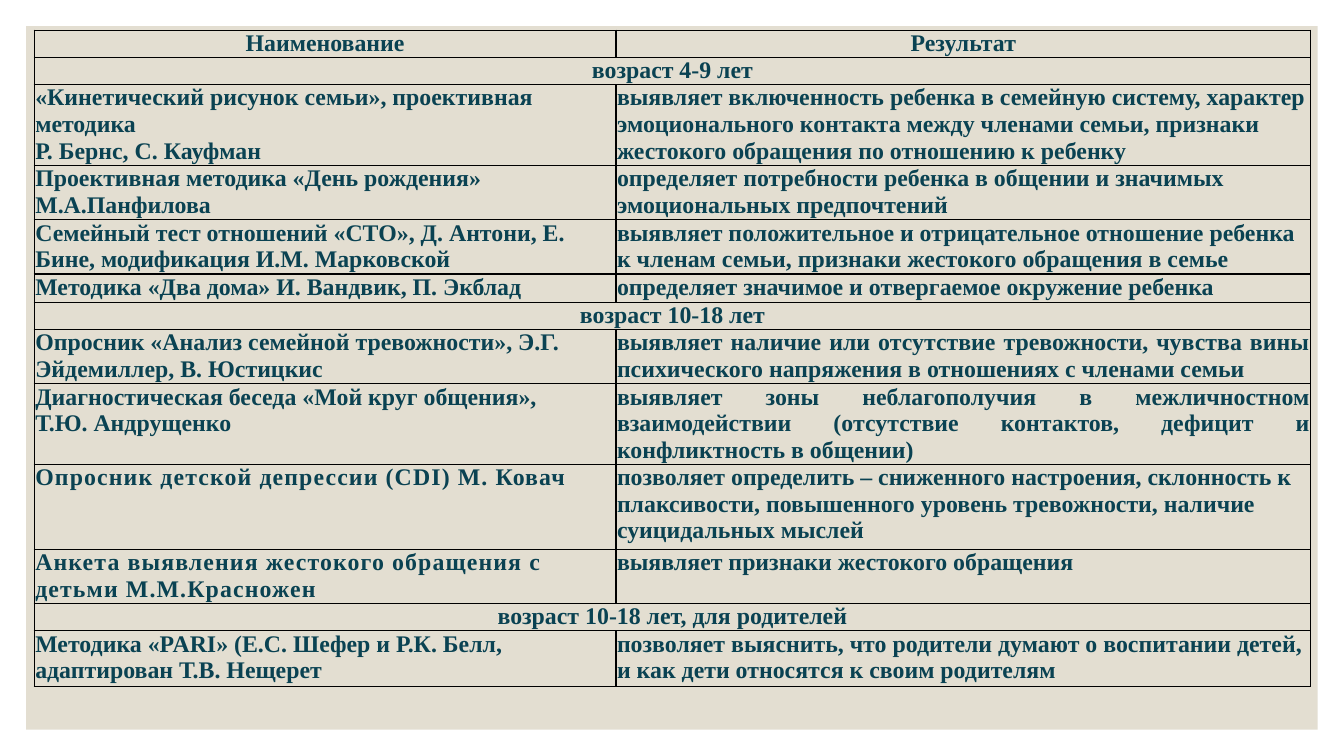
from lxml import etree
from pptx import Presentation, util as u
from pptx.dml.color import RGBColor
from pptx.enum import shapes, text
from pptx.oxml.ns import qn

WIDTH, HEIGHT = 13.33, 7.5
INK, PANEL, LINE = "0A4252", "E3DED1", "000000"
FONT = {"name": "Times New Roman", "size": u.Pt(17), "bold": True}
MARGINS = {"margin_left": u.Inches(0.01), "margin_right": u.Inches(0.01),
           "margin_top": 0, "margin_bottom": 0}
LEFT, CENTER, JUSTIFY = (text.PP_ALIGN.LEFT, text.PP_ALIGN.CENTER,
                         text.PP_ALIGN.JUSTIFY)
COLUMNS = (5.77, 6.89)

# Row height, cell texts (a single text spans the row), optional formats
ROWS = [
    (0.27, ["Наименование", "Результат"], {"align": (CENTER, CENTER)}),
    (0.27, ["возраст 4-9 лет"], {}),
    (0.8, ["«Кинетический рисунок семьи», проективная методика\n"
           "Р. Бернс, С. Кауфман",
           "выявляет включенность ребенка в семейную систему, характер "
           "эмоционального контакта между членами семьи, признаки "
           "жестокого обращения по отношению к ребенку"], {}),
    (0.54, ["Проективная методика «День рождения» М.А.Панфилова",
            "определяет потребности ребенка в общении и значимых "
            "эмоциональных предпочтений"], {}),
    (0.54, ["Семейный тест отношений «СТО», Д. Антони, Е. Бине, "
            "модификация И.М. Марковской",
            "выявляет положительное и отрицательное отношение ребенка "
            "к членам семьи, признаки жестокого обращения в семье"], {}),
    (0.28, ["Методика «Два дома» И. Вандвик, П. Экблад",
            "определяет значимое и отвергаемое окружение ребенка"], {}),
    (0.27, ["возраст 10-18 лет"], {}),
    (0.54, ["Опросник «Анализ семейной тревожности», Э.Г. Эйдемиллер, "
            "В. Юстицкис",
            "выявляет наличие или отсутствие тревожности, чувства вины "
            "психического напряжения в отношениях с членами семьи"],
     {"align": (LEFT, JUSTIFY)}),
    (0.8, ["Диагностическая беседа «Мой круг общения»,\nТ.Ю. Андрущенко",
           "выявляет зоны неблагополучия в межличностном взаимодействии "
           "(отсутствие контактов, дефицит и конфликтность в общении)"],
     {"align": (LEFT, JUSTIFY)}),
    (0.84, ["Опросник детской депрессии (CDI) М. Ковач",
            "позволяет определить – сниженного настроения, склонность к "
            "плаксивости, повышенного уровень тревожности, наличие "
            "суицидальных мыслей"], {"spacing": (0.8, 0)}),
    (0.54, ["Анкета выявления жестокого обращения с детьми М.М.Красножен",
            "выявляет признаки жестокого обращения"], {"spacing": (0.8, 0)}),
    (0.27, ["возраст 10-18 лет, для родителей"], {}),
    (0.55, ["Методика «PARI» (Е.С. Шефер и Р.К. Белл, адаптирован "
            "Т.В. Нещерет",
            "позволяет выяснить, что родители думают о воспитании детей, "
            "и как дети относятся к своим родителям"], {}),
]


def color(value):
    return RGBColor.from_string(value)


def apply(target, formats):
    for name, value in formats.items():
        setattr(target, name, value)


def add_panel(s):
    edge = 0.26
    sp = s.shapes.add_shape(
        shapes.MSO_SHAPE.RECTANGLE, u.Inches(edge), u.Inches(edge),
        u.Inches(WIDTH - 2 * edge), u.Inches(HEIGHT - 2 * edge))
    sp.shadow.inherit = False
    sp.fill.solid()
    sp.fill.fore_color.rgb = color(PANEL)
    sp.line.fill.background()


def set_borders(cell, points=1):
    tcPr = cell._tc.get_or_add_tcPr()
    for i, side in enumerate(("lnL", "lnR", "lnT", "lnB")):
        ln = etree.Element(qn("a:" + side), w=str(u.Pt(points)))
        fill = etree.SubElement(ln, qn("a:solidFill"))
        etree.SubElement(fill, qn("a:srgbClr"), val=LINE)
        tcPr.insert(i, ln)


def write_cell(cell, content, align, spacing):
    cell.text = content
    for p in cell.text_frame.paragraphs:
        p.alignment = align
        for r in p.runs:
            apply(r.font, FONT)
            r.font.color.rgb = color(INK)
            if spacing:
                r._r.get_or_add_rPr().set("spc", str(round(spacing * 100)))


def add_methods_table(s):
    frame = s.shapes.add_table(
        len(ROWS), len(COLUMNS), u.Inches(0.34), u.Inches(0.3),
        u.Inches(sum(COLUMNS)), u.Inches(sum(row[0] for row in ROWS)))
    table = frame.table
    apply(table, {"first_row": False, "horz_banding": False})
    for column, width in zip(table.columns, COLUMNS):
        column.width = u.Inches(width)

    for i, (height, texts, formats) in enumerate(ROWS):
        table.rows[i].height = u.Inches(height)
        for cell in table.rows[i].cells:
            apply(cell, MARGINS)
            cell.fill.background()
            set_borders(cell)
        # Age group headings take the full width
        is_heading = len(texts) == 1
        if is_heading:
            table.cell(i, 0).merge(table.cell(i, 1))
        aligns = formats.get("align", (CENTER if is_heading else LEFT, LEFT))
        spacings = formats.get("spacing", (0, 0))
        for j, content in enumerate(texts):
            write_cell(table.cell(i, j), content, aligns[j], spacings[j])


def main():
    prs = Presentation()
    prs.slide_width, prs.slide_height = u.Inches(WIDTH), u.Inches(HEIGHT)
    s = prs.slides.add_slide(prs.slide_layouts[6])
    add_panel(s)
    add_methods_table(s)
    prs.save("out.pptx")


if __name__ == "__main__":
    main()
